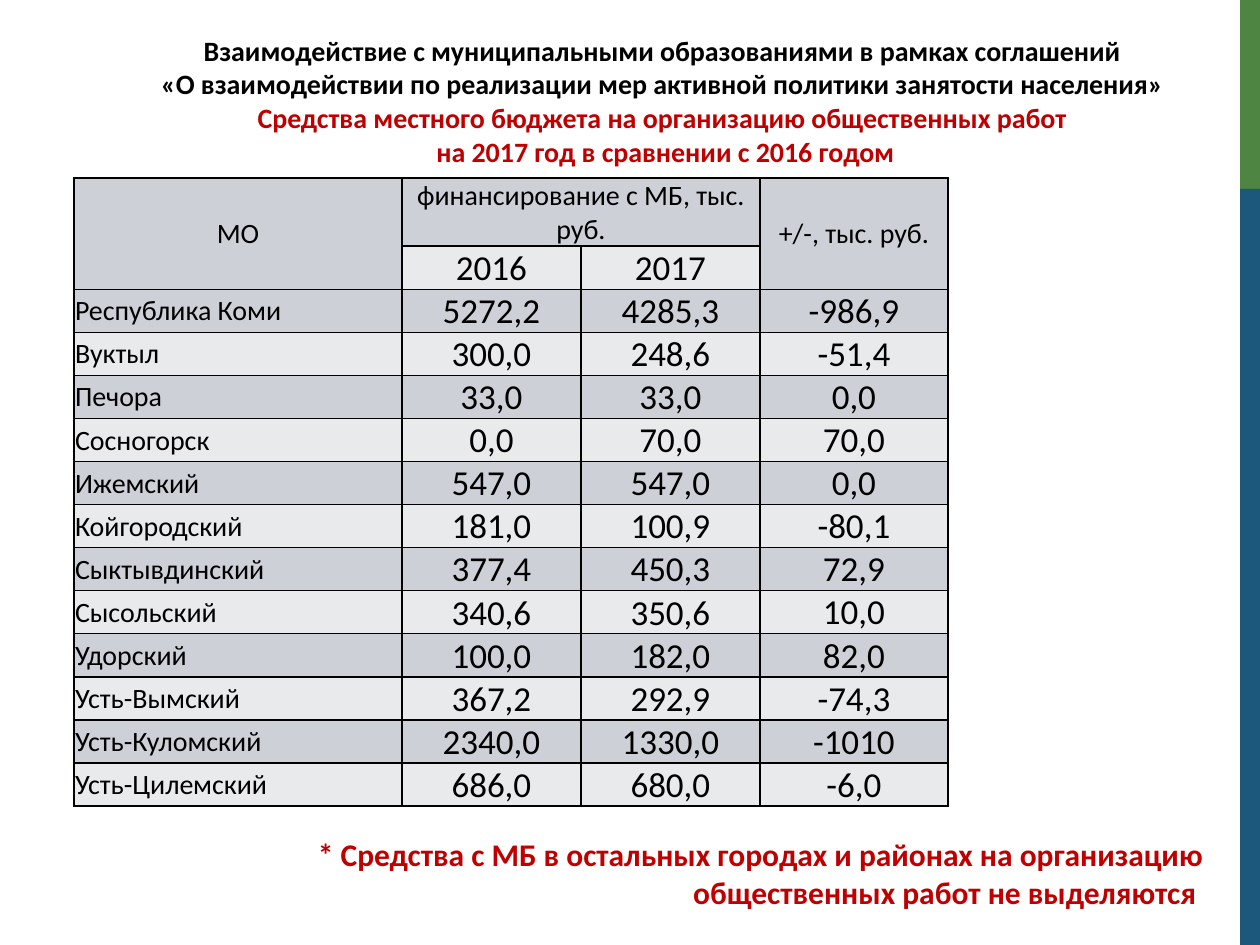
from typing import NamedTuple

from lxml.etree import SubElement
from pptx import Presentation
from pptx.dml.color import RGBColor
from pptx.enum.shapes import MSO_SHAPE
from pptx.enum.text import MSO_ANCHOR, MSO_AUTO_SIZE, PP_ALIGN
from pptx.oxml.ns import qn
from pptx.util import Emu, Pt

PX_PER_INCH = 126
BLACK = RGBColor(0x00, 0x00, 0x00)
RED = RGBColor(0xC0, 0x00, 0x00)
GREEN = RGBColor(0x4E, 0x85, 0x42)
BLUE = RGBColor(0x1B, 0x58, 0x7C)
BANDS = (RGBColor(0xCD, 0xD1, 0xD7), RGBColor(0xE8, 0xEA, 0xEC))


class Box(NamedTuple):
    left: int
    top: int
    width: int
    height: int


class Stripe(NamedTuple):
    box: Box
    color: RGBColor


class Line(NamedTuple):
    text: str
    color: RGBColor


STRIPES = (
    Stripe(Box(1240, 0, 20, 189), GREEN),
    Stripe(Box(1240, 189, 20, 756), BLUE),
)
TITLE_BOX = Box(105, 27, 1121, 149)
TITLE = (
    Line("Взаимодействие с муниципальными образованиями в рамках соглашений ", BLACK),
    Line("«О взаимодействии по реализации мер активной политики занятости населения» ", BLACK),
    Line("Средства местного бюджета на организацию общественных работ ", RED),
    Line("на 2017 год в сравнении с 2016 годом", RED),
)
NOTE_BOX = Box(105, 829, 1111, 89)
NOTE = (
    Line("* Средства с МБ в остальных городах и районах на организацию "
         "общественных работ не выделяются ", RED),
)
TABLE_LEFT, TABLE_TOP = 74, 178
COLUMN_WIDTHS = (328, 179, 179, 188)
HEADER_HEIGHT, ROW_HEIGHT = 68, 43
HEADER_ROWS = 2
MERGES = (((0, 0), (1, 0)), ((0, 1), (0, 2)), ((0, 3), (1, 3)))
ROWS = (
    ("МО", "финансирование с МБ, тыс. руб.", "", "+/-, тыс. руб."),
    ("", "2016", "2017", ""),
    ("Республика Коми", "5272,2", "4285,3", "-986,9"),
    ("Вуктыл", "300,0", "248,6", "-51,4"),
    ("Печора", "33,0", "33,0", "0,0"),
    ("Сосногорск", "0,0", "70,0", "70,0"),
    ("Ижемский", "547,0", "547,0", "0,0"),
    ("Койгородский", "181,0", "100,9", "-80,1"),
    ("Сыктывдинский", "377,4", "450,3", "72,9"),
    ("Сысольский", "340,6", "350,6", "10,0"),
    ("Удорский", "100,0", "182,0", "82,0"),
    ("Усть-Вымский", "367,2", "292,9", "-74,3"),
    ("Усть-Куломский", "2340,0", "1330,0", "-1010"),
    ("Усть-Цилемский", "686,0", "680,0", "-6,0"),
)


def px(value: int) -> Emu:
    return Emu(round(value * 914400 / PX_PER_INCH))


def set_attrs(target, **values) -> None:
    for name, value in values.items():
        setattr(target, name, value)


def write_run(p, text: str, size: int, color: RGBColor, bold: bool) -> None:
    r = p.add_run()
    r.text = text
    set_attrs(r.font, name="Calibri", size=Pt(size), bold=bold)
    r.font.color.rgb = color


def write_lines(sp, box: Box, lines: tuple, size: int, align: PP_ALIGN) -> None:
    set_attrs(sp, **{name: px(value) for name, value in box._asdict().items()})
    tf = sp.text_frame
    set_attrs(tf, word_wrap=True, auto_size=MSO_AUTO_SIZE.SHAPE_TO_FIT_TEXT,
              vertical_anchor=MSO_ANCHOR.TOP)
    for i, line in enumerate(lines):
        p = tf.add_paragraph() if i else tf.paragraphs[0]
        p.alignment = align
        write_run(p, line.text, size, line.color, bold=True)


def draw_stripe(slide, stripe: Stripe) -> None:
    sp = slide.shapes.add_shape(MSO_SHAPE.RECTANGLE, *map(px, stripe.box))
    sp.shadow.inherit = False
    sp.fill.solid()
    sp.fill.fore_color.rgb = stripe.color
    sp.line.fill.background()


def add_borders(cell) -> None:
    """Give the cell a 1 pt black line on each side; call before setting its fill."""
    tc_pr = cell._tc.get_or_add_tcPr()
    for side in ("lnL", "lnR", "lnT", "lnB"):
        ln = SubElement(tc_pr, qn(f"a:{side}"), w=str(Pt(1)))
        fill = SubElement(ln, qn("a:solidFill"))
        SubElement(fill, qn("a:srgbClr"), val=str(BLACK))


def format_cell(cell, row: int, col: int) -> None:
    is_header = row < HEADER_ROWS
    is_change = col == len(COLUMN_WIDTHS) - 1 and not is_header
    is_name = col == 0 and not is_header
    add_borders(cell)
    cell.fill.solid()
    cell.fill.fore_color.rgb = BANDS[row % 2]
    set_attrs(cell, margin_left=px(1), margin_right=px(1), margin_top=px(1), margin_bottom=0,
              vertical_anchor=MSO_ANCHOR.BOTTOM if is_change else MSO_ANCHOR.MIDDLE)
    text = ROWS[row][col]
    if text:
        p = cell.text_frame.paragraphs[0]
        p.alignment = PP_ALIGN.LEFT if is_name else PP_ALIGN.CENTER
        write_run(p, text, 16 if row == 0 or col == 0 else 20, BLACK, bold=False)


def draw_table(slide) -> None:
    heights = [HEADER_HEIGHT] + [ROW_HEIGHT] * (len(ROWS) - 1)
    box = Box(TABLE_LEFT, TABLE_TOP, sum(COLUMN_WIDTHS), sum(heights))
    table = slide.shapes.add_table(len(ROWS), len(COLUMN_WIDTHS), *map(px, box)).table
    set_attrs(table, first_row=False, horz_banding=False)
    for column, width in zip(table.columns, COLUMN_WIDTHS):
        column.width = px(width)
    for row, height in zip(table.rows, heights):
        row.height = px(height)
    for row in range(len(ROWS)):
        for col in range(len(COLUMN_WIDTHS)):
            format_cell(table.cell(row, col), row, col)
    for first, last in MERGES:
        table.cell(*first).merge(table.cell(*last))


def main() -> None:
    prs = Presentation()
    set_attrs(prs, slide_width=px(1260), slide_height=px(945))
    s = prs.slides.add_slide(prs.slide_layouts.get_by_name("Title Only"))
    for stripe in STRIPES:
        draw_stripe(s, stripe)
    draw_table(s)
    write_lines(s.shapes.title, TITLE_BOX, TITLE, 16, PP_ALIGN.CENTER)
    note = s.shapes.add_textbox(*map(px, NOTE_BOX))
    write_lines(note, NOTE_BOX, NOTE, 18, PP_ALIGN.RIGHT)
    prs.save("out.pptx")


if __name__ == "__main__":
    main()
